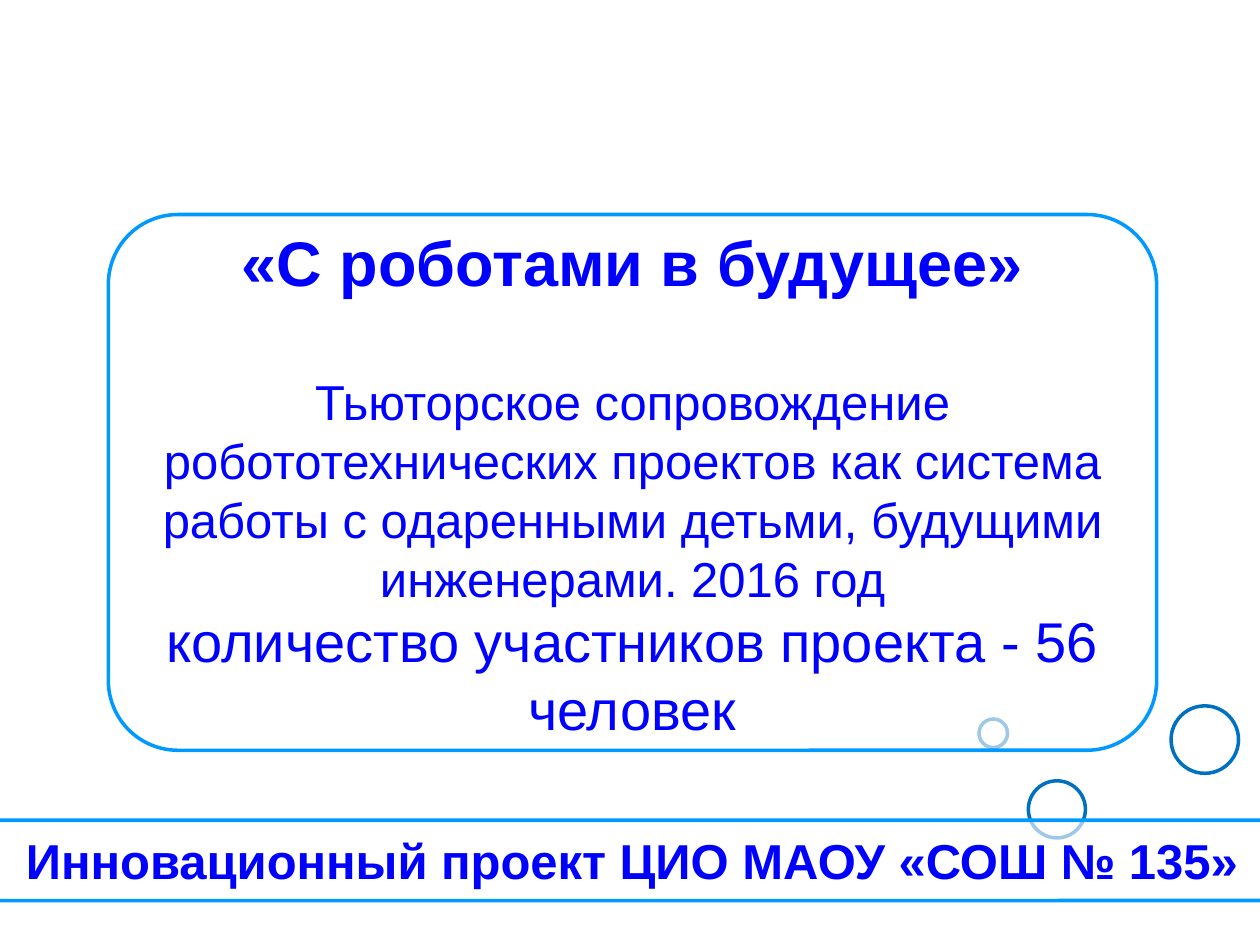
from dataclasses import dataclass
from lxml import etree
from pptx import Presentation
from pptx.dml.color import RGBColor
from pptx.enum import shapes, text
from pptx.oxml import ns
from pptx.util import Inches, Pt


@dataclass(frozen=True)
class Theme:
    """Colours, type sizes and line width of the slide."""
    font: str = "Arial"
    ink: str = "0000FF"
    edge: str = "0099FF"
    ring: str = "0070C0"
    fill: str = "FFFFFF"
    head: int = 36
    lead: int = 32
    body: int = 28
    gap: float = 41.4
    line: int = 2


@dataclass(frozen=True)
class Box:
    """A rectangle in inches that hands out shares of itself."""
    x: float
    y: float
    w: float
    h: float

    def share(self, x, y, w, h):
        """Return the box at the given shares of this one."""
        return Box(self.x + x * self.w, self.y + y * self.h, w * self.w, h * self.h)


THEME = Theme()
PAGE = Box(0, 0, 10, 7.5)


def shape(slide, kind, box, edge, alpha):
    """Add an outlined shape with a translucent fill."""
    item = slide.shapes.add_shape(kind, *map(Inches, (box.x, box.y, box.w, box.h)))
    item.shadow.inherit = False
    item.fill.solid()
    item.fill.fore_color.rgb = RGBColor.from_string(THEME.fill)
    tint = item.element.spPr.find(ns.qn("a:solidFill")).find(ns.qn("a:srgbClr"))
    etree.SubElement(tint, ns.qn("a:alpha"), val=str(alpha * 1000))
    item.line.color.rgb = RGBColor.from_string(edge)
    item.line.width = Pt(THEME.line)
    return item


def rings(slide, box):
    """Draw the three rings, each sized as a share of the box width."""
    for x, y, size in ((0.74, 0, 0.26), (0.19, 0.57, 0.22), (0, 0.1, 0.11)):
        spot = box.share(x, y, size, size * box.w / box.h)
        shape(slide, shapes.MSO_SHAPE.OVAL, spot, THEME.ring, 45)


def panel(slide, box, lines):
    """Draw a rounded panel with centred lines of words, size, weight and gap."""
    item = shape(slide, shapes.MSO_SHAPE.ROUNDED_RECTANGLE, box, THEME.edge, 62)
    item.adjustments[0] = 0.13
    frame = item.text_frame
    frame.word_wrap = True
    frame.vertical_anchor = text.MSO_ANCHOR.MIDDLE
    frame.text = "\n".join(line[0] for line in lines)
    for para, (_, size, bold, gap) in zip(frame.paragraphs, lines):
        para.alignment = text.PP_ALIGN.CENTER
        if gap:
            para.space_before = Pt(gap)
        for run in para.runs:
            run.font.name = THEME.font
            run.font.size = Pt(size)
            run.font.bold = bold
            run.font.color.rgb = RGBColor.from_string(THEME.ink)


def main():
    """Build the slide and save it."""
    deck = Presentation()
    deck.slide_width, deck.slide_height = Inches(PAGE.w), Inches(PAGE.h)
    slide = deck.slides.add_slide(deck.slide_layouts[6])
    rings(slide, PAGE.share(0.777, 0.747, 0.206, 0.139))
    panel(slide, PAGE.share(0.086, 0.227, 0.832, 0.567), (
        ("«С роботами в будущее»", THEME.head, True, 0),
        ("Тьюторское сопровождение робототехнических проектов как система "
         "работы с одаренными детьми, будущими инженерами. 2016 год",
         THEME.body, False, THEME.gap),
        ("количество участников проекта - 56 человек", THEME.lead, False, 0),
    ))
    panel(slide, PAGE.share(-0.008, 0.868, 1.019, 0.085), (
        ("Инновационный проект ЦИО МАОУ «СОШ № 135»", THEME.body, True, 0),
    ))
    deck.save("out.pptx")


if __name__ == "__main__":
    main()
